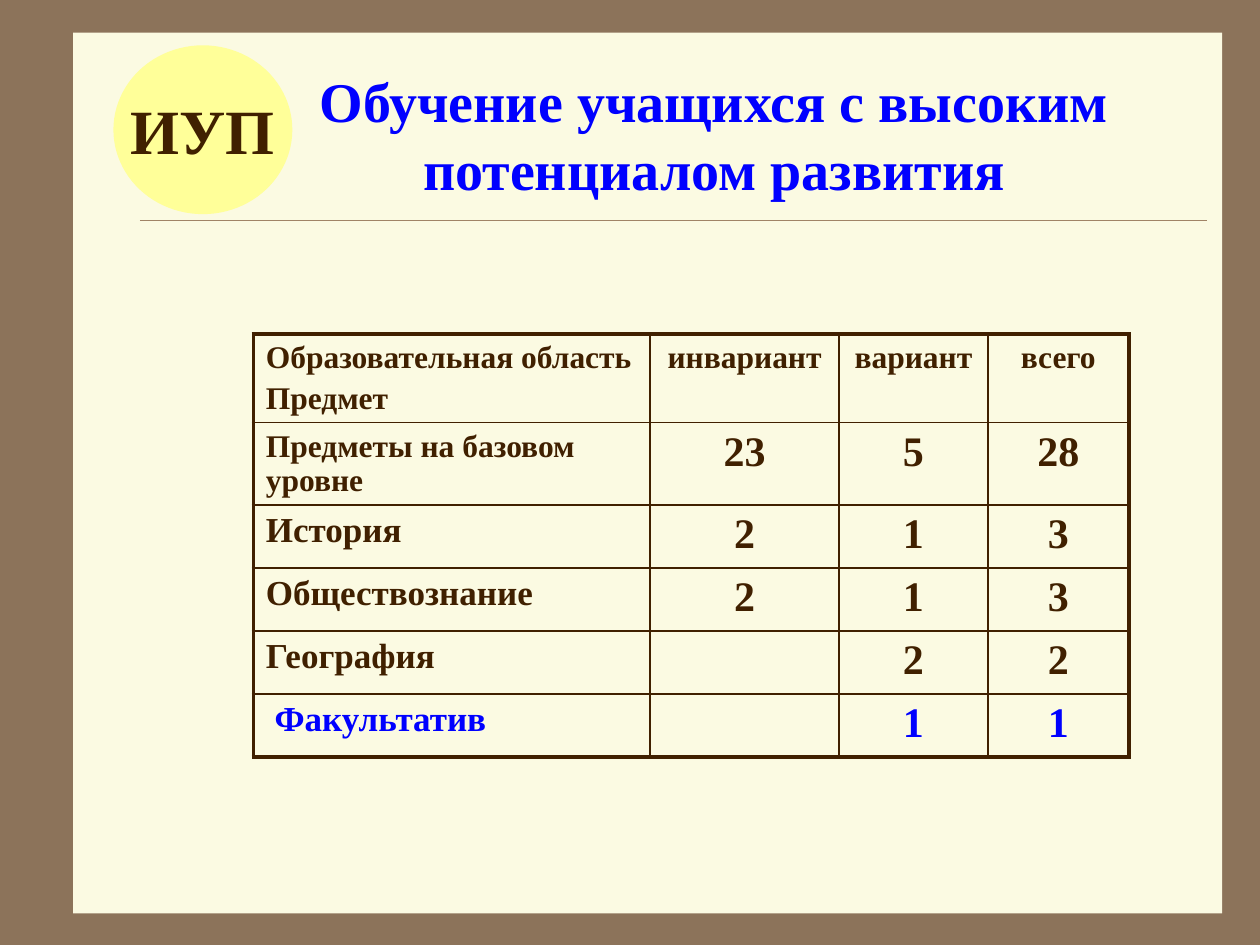
import pptx
import pptx.dml.color
import pptx.enum.shapes
import pptx.enum.text
import pptx.oxml
import pptx.oxml.ns
import pptx.util
from dataclasses import dataclass

Inches, Pt = pptx.util.Inches, pptx.util.Pt
Align = pptx.enum.text.PP_ALIGN
Anchor = pptx.enum.text.MSO_ANCHOR
Shape = pptx.enum.shapes.MSO_SHAPE


@dataclass(frozen=True)
class Theme:
    font: str = "Times New Roman"
    frame: str = "8C735A"
    paper: str = "FBFAE2"
    rule: str = "A08366"
    badge: str = "FFFF99"
    ink: str = "402000"
    accent: str = "0000FF"
    badge_size: int = 36
    title_size: int = 32
    number_size: int = 24
    subject_size: int = 20
    header_size: int = 18
    outer_border: float = 2.25
    inner_border: float = 1


def rgb(code):
    return pptx.dml.color.RGBColor.from_string(code)


class SlideBuilder:
    def __init__(self, slide, theme):
        self.slide = slide
        self.theme = theme
        slide.background.fill.solid()
        slide.background.fill.fore_color.rgb = rgb(theme.frame)

    def style(self, frame, size, color, align):
        for number, paragraph in enumerate(frame.paragraphs):
            paragraph.alignment = align
            paragraph.space_before = Pt(size * 0.2 if number else 0)
            font = paragraph.font
            font.name, font.size, font.bold = self.theme.font, Pt(size), True
            font.color.rgb = rgb(color)

    def shape(self, kind, left, top, width, height, fill):
        shape = self.slide.shapes.add_shape(
            kind, Inches(left), Inches(top), Inches(width), Inches(height))
        shape.shadow.inherit = False
        shape.fill.solid()
        shape.fill.fore_color.rgb = rgb(fill)
        shape.line.fill.background()
        return shape

    def rule(self, left, right, y):
        line = self.slide.shapes.add_connector(
            pptx.enum.shapes.MSO_CONNECTOR.STRAIGHT,
            Inches(left), Inches(y), Inches(right), Inches(y))
        line.line.color.rgb = rgb(self.theme.rule)
        line.line.width = Pt(0.25)
        properties = line.element.find(pptx.oxml.ns.qn("p:spPr"))
        properties.append(pptx.oxml.parse_xml(
            f'<a:effectLst {pptx.oxml.ns.nsdecls("a")}/>'))

    def title(self, text, left, top, width, height):
        title = self.slide.shapes.title
        title.left, title.top = Inches(left), Inches(top)
        title.width, title.height = Inches(width), Inches(height)
        frame = title.text_frame
        frame.text = text
        frame.word_wrap = True
        frame.auto_size = pptx.enum.text.MSO_AUTO_SIZE.NONE
        frame.vertical_anchor = Anchor.MIDDLE
        self.style(frame, self.theme.title_size, self.theme.accent, Align.CENTER)
        # Bring the title in front of the panel
        title.element.getparent().append(title.element)

    def badge(self, text, left, top, width, height):
        circle = self.shape(Shape.OVAL, left, top, width, height, self.theme.badge)
        frame = circle.text_frame
        frame.text = text
        frame.word_wrap = False
        frame.vertical_anchor = Anchor.MIDDLE
        self.style(frame, self.theme.badge_size, self.theme.ink, Align.CENTER)

    def borders(self, cell, outer_sides):
        properties = cell._tc.get_or_add_tcPr()
        for side in "LRTB":
            points = (self.theme.outer_border if side in outer_sides
                      else self.theme.inner_border)
            properties.append(pptx.oxml.parse_xml(
                f'<a:ln{side} {pptx.oxml.ns.nsdecls("a")} w="{Pt(points)}">'
                f'<a:solidFill><a:srgbClr val="{self.theme.ink}"/></a:solidFill>'
                f'</a:ln{side}>'))

    def table(self, rows, left, top, widths, heights):
        table = self.slide.shapes.add_table(
            len(rows), len(widths), Inches(left), Inches(top),
            Inches(sum(widths)), Inches(sum(heights))).table
        table.first_row = table.horz_banding = False
        for column, width in zip(table.columns, widths):
            column.width = Inches(width)
        for row, height in zip(table.rows, heights):
            row.height = Inches(height)

        theme = self.theme
        last_row, last_column = len(rows) - 1, len(widths) - 1
        for r, values in enumerate(rows):
            color = theme.accent if r == last_row else theme.ink
            for c, value in enumerate(values):
                cell = table.cell(r, c)
                edges = {"L": c == 0, "R": c == last_column,
                         "T": r == 0, "B": r == last_row}
                self.borders(cell, [side for side, outer in edges.items() if outer])
                cell.fill.solid()
                cell.fill.fore_color.rgb = rgb(theme.paper)
                cell.text = value
                if r == 0 or (r == 1 and c == 0):
                    size = theme.header_size
                else:
                    size = theme.number_size if c else theme.subject_size
                self.style(cell.text_frame, size, color,
                           Align.CENTER if c else Align.LEFT)
        # The elective is slightly indented
        table.cell(last_row, 0).margin_left = Inches(0.17)


def main():
    deck = pptx.Presentation()
    deck.slide_width, deck.slide_height = Inches(10), Inches(7.5)
    theme = Theme()
    builder = SlideBuilder(deck.slides.add_slide(deck.slide_layouts[5]), theme)

    # Paper panel and heading
    builder.shape(Shape.RECTANGLE, 0.58, 0.26, 9.12, 6.99, theme.paper)
    builder.rule(1.11, 9.58, 1.75)
    builder.title("Обучение учащихся с высоким\vпотенциалом развития",
                  1.77, 0.44, 7.8, 1.25)
    builder.badge("ИУП", 0.9, 0.36, 1.42, 1.34)

    # Hours by subject
    hours = [
        ("Образовательная область\nПредмет", "инвариант", "вариант", "всего"),
        ("Предметы на базовом уровне", "23", "5", "28"),
        ("История", "2", "1", "3"),
        ("Обществознание", "2", "1", "3"),
        ("География", "", "2", "2"),
        ("Факультатив", "", "1", "1"),
    ]
    builder.table(hours, 2.01, 2.65, widths=[3.15, 1.5, 1.18, 1.12],
                  heights=[0.7, 0.65] + [0.5] * 4)

    deck.save("out.pptx")


if __name__ == "__main__":
    main()
